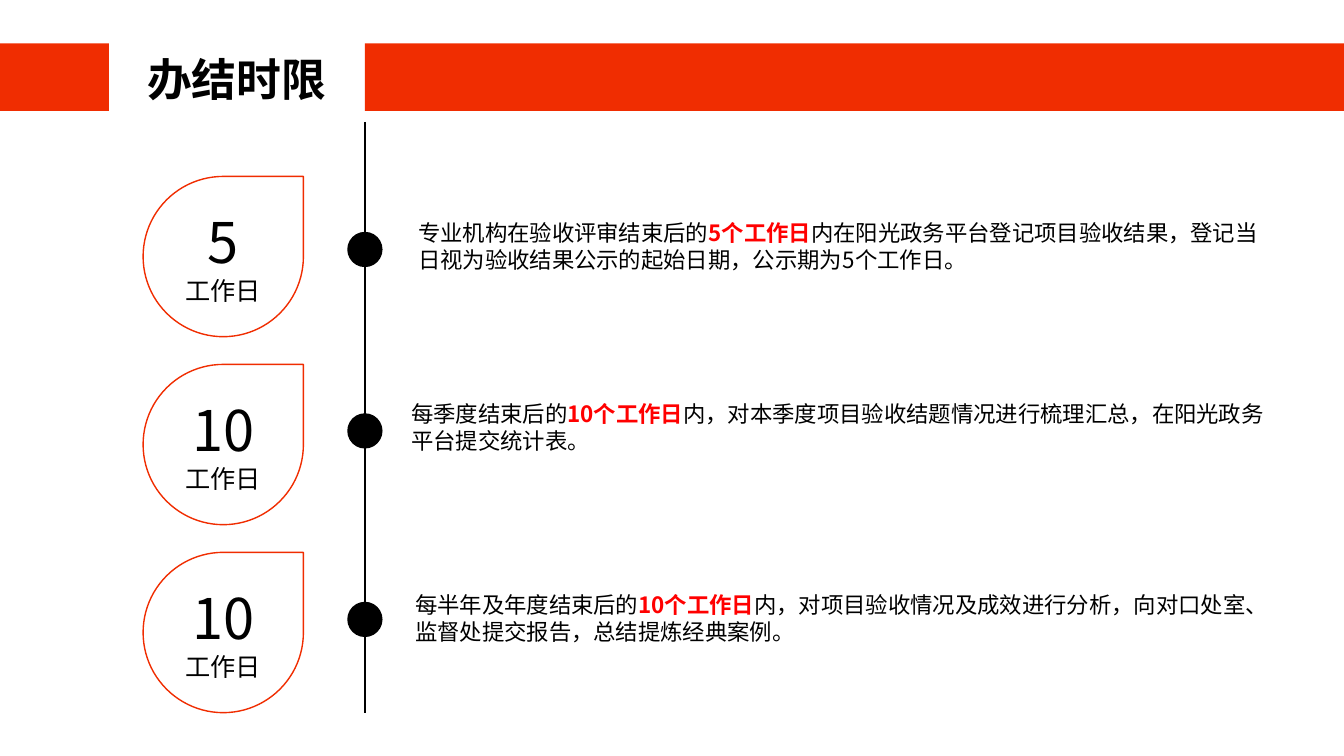
import pptx
import pptx.util
import pptx.dml.color
import pptx.enum.dml
import pptx.enum.shapes
import pptx.enum.text
import pptx.oxml.ns
from lxml import etree

COLORS = {"accent": "F02D01", "ink": "000000", "highlight": "FF0000"}
FONT = "Noto Sans CJK SC"
COLUMNS, ROWS = 160, 90
LINE_HEIGHT = 1.21
SHAPES = pptx.enum.shapes.MSO_SHAPE
ALIGN = pptx.enum.text.PP_ALIGN


class DeadlineSlide:
    """Holds the style and the current slide; lengths are grid columns and rows."""

    def __init__(self, presentation):
        self.column = presentation.slide_width / COLUMNS
        self.row = presentation.slide_height / ROWS
        self.slide = presentation.slides.add_slide(presentation.slide_layouts[6])

    def box(self, left, top, width, height):
        return (round(left * self.column), round(top * self.row),
                round(width * self.column), round(height * self.row))

    @staticmethod
    def color(name):
        return pptx.dml.color.RGBColor.from_string(COLORS[name])

    def shape(self, kind, area, fill=None, line=None):
        shape = self.slide.shapes.add_shape(kind, *self.box(*area))
        shape.shadow.inherit = False
        for part, name in ((shape.fill, fill), (shape.line.fill, line)):
            if name:
                part.solid()
                part.fore_color.rgb = self.color(name)
            else:
                part.background()
        if line:
            shape.line.width = pptx.util.Pt(1)
        return shape

    def line(self, x, top, bottom):
        left, start, _, height = self.box(x, top, 0, bottom - top)
        connector = self.slide.shapes.add_connector(
            pptx.enum.shapes.MSO_CONNECTOR.STRAIGHT, left, start, left, start + height)
        connector.line.color.rgb = self.color("ink")
        connector.line.width = pptx.util.Pt(1)
        properties = connector._element.spPr
        etree.SubElement(properties, pptx.oxml.ns.qn("a:effectLst"))

    def text_box(self, area):
        shape = self.slide.shapes.add_textbox(*self.box(*area))
        frame = shape.text_frame
        frame.word_wrap = True
        frame.auto_size = pptx.enum.text.MSO_AUTO_SIZE.SHAPE_TO_FIT_TEXT
        return frame

    def fill_paragraph(self, paragraph, pieces, size, alignment=ALIGN.LEFT):
        """Fill a paragraph with (text, color, bold) pieces."""
        paragraph.alignment = alignment
        paragraph.line_spacing = pptx.util.Pt(round(size * LINE_HEIGHT, 1))
        for text, color, bold in pieces:
            run = paragraph.add_run()
            run.text = text
            formats = {"name": FONT, "size": pptx.util.Pt(size), "bold": bold}
            for attribute, value in formats.items():
                setattr(run.font, attribute, value)
            run.font.color.rgb = self.color(color)
            properties = run._r.get_or_add_rPr()
            east_asian = etree.SubElement(properties, pptx.oxml.ns.qn("a:ea"))
            east_asian.set("typeface", FONT)

    def badge(self, area, days):
        shape = self.shape(SHAPES.TEAR, area, line="accent")
        frame = shape.text_frame
        frame.vertical_anchor = pptx.enum.text.MSO_ANCHOR.MIDDLE
        self.fill_paragraph(frame.paragraphs[0], [(days, "ink", False)], 40, ALIGN.CENTER)
        self.fill_paragraph(frame.add_paragraph(), [("工作日", "ink", False)], 18, ALIGN.CENTER)


# Grid positions of the timeline
AXIS = 43.44
DOT = 4.2
BADGE_LEFT, BADGE_TOP, BADGE_SIZE, BADGE_STEP = 17.04, 21, 19.08, 22.38
BAR_TOP, BAR_HEIGHT = 5.16, 8.04

# Days, dot top, text area, text before and after the highlighted deadline
STEPS = [
    ("5", 27.6, (48.6, 25.44, 103.8, 7.68), "专业机构在验收评审结束后的",
     "内在阳光政务平台登记项目验收结果，登记当日视为验收结果公示的起始日期，公示期为5个工作日。"),
    ("10", 49.2, (47.76, 47.04, 104.52, 7.68), "每季度结束后的",
     "内，对本季度项目验收结题情况进行梳理汇总，在阳光政务平台提交统计表。"),
    ("10", 71.64, (48.24, 69.72, 104.52, 7.68), "每半年及年度结束后的",
     "内，对项目验收情况及成效进行分析，向对口处室、监督处提交报告，总结提炼经典案例。"),
]


def main():
    presentation = pptx.Presentation()
    presentation.slide_width = pptx.util.Inches(13.33)
    presentation.slide_height = pptx.util.Inches(7.5)
    page = DeadlineSlide(presentation)

    # Title band
    for left, right in ((0, 12.96), (AXIS, COLUMNS)):
        page.shape(SHAPES.RECTANGLE, (left, BAR_TOP, right - left, BAR_HEIGHT), fill="accent")
    title = page.text_box((10.92, 5.52, 34.56, 7.68))
    page.fill_paragraph(title.paragraphs[0], [("办结时限", "ink", True)], 32, ALIGN.CENTER)

    # Timeline with one badge, dot and description per step
    page.line(AXIS, 14.52, 84.84)
    for index, (days, dot_top, area, before, after) in enumerate(STEPS):
        badge_top = BADGE_TOP + index * BADGE_STEP
        page.badge((BADGE_LEFT, badge_top, BADGE_SIZE, BADGE_SIZE), days)
        page.shape(SHAPES.OVAL, (AXIS - DOT / 2, dot_top, DOT, DOT), fill="ink")
        description = page.text_box(area)
        page.fill_paragraph(description.paragraphs[0], [
            (before, "ink", False),
            (f"{days}个工作日", "highlight", True),
            (after, "ink", False),
        ], 16)

    presentation.save("out.pptx")


if __name__ == "__main__":
    main()
